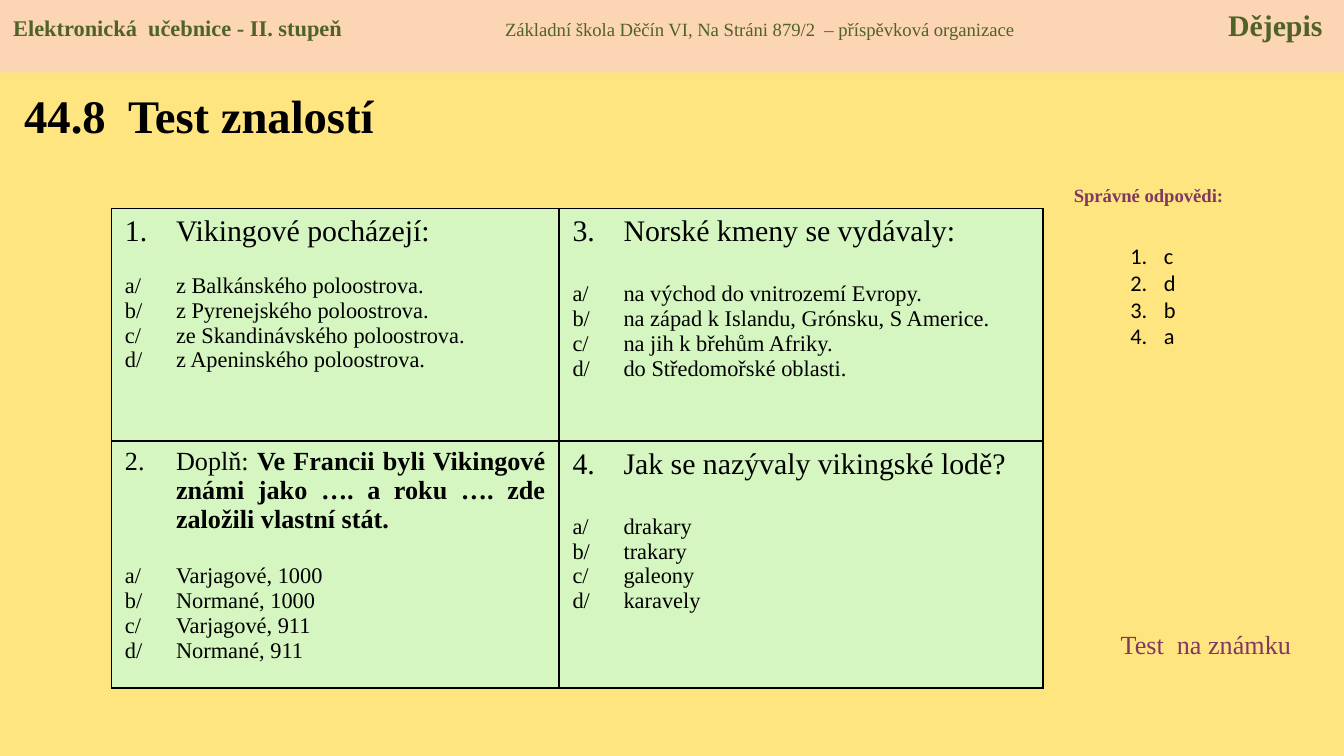
from pptx import Presentation
from pptx.dml.color import RGBColor
from pptx.enum.shapes import MSO_SHAPE
from pptx.enum.text import MSO_ANCHOR, MSO_AUTO_SIZE, PP_ALIGN
from pptx.oxml.ns import qn
from pptx.util import Inches, Pt
from lxml.etree import SubElement

COLORS = {
    "background": "FFE57F",
    "header": "FCD5B5",
    "green": "4F6228",
    "purple": "813763",
    "cell": "D5F6C0",
    "black": "000000",
}
SERIF = "Times New Roman"
INDENT = 0.38

QUESTIONS = [
    [
        dict(number=1, size=16, gap=13.5, prompt=[("Vikingové pocházejí:", False)],
             answers=["z Balkánského poloostrova.", "z Pyrenejského poloostrova.",
                      "ze Skandinávského poloostrova.", "z Apeninského poloostrova."]),
        dict(number=3, size=16, gap=18, prompt=[("Norské kmeny se vydávaly:", False)],
             answers=["na východ do vnitrozemí Evropy.",
                      "na západ k Islandu, Grónsku, S Americe.",
                      "na jih k břehům Afriky.", "do Středomořské oblasti."]),
    ],
    [
        dict(number=2, size=14, gap=16, align=PP_ALIGN.JUSTIFY,
             prompt=[("Doplň: ", False),
                     ("Ve Francii byli Vikingové známi jako …. a roku …. "
                      "zde založili vlastní stát.", True)],
             answers=["Varjagové, 1000", "Normané, 1000", "Varjagové, 911", "Normané, 911"]),
        dict(number=4, size=16, gap=18, prompt=[("Jak se nazývaly vikingské lodě?", False)],
             answers=["drakary", "trakary", "galeony", "karavely"]),
    ],
]


def rgb(name):
    return RGBColor.from_string(COLORS[name])


def add_run(p, text, size=12, bold=False, color="black", font=SERIF):
    r = p.add_run()
    r.text = text
    r.font.size = Pt(size)
    r.font.bold = bold
    r.font.name = font
    r.font.color.rgb = rgb(color)


def next_paragraph(tf, first):
    p = tf.paragraphs[0] if first else tf.add_paragraph()
    p.space_before = p.space_after = Pt(0)
    return p


def hang(p, indent, number=None):
    pPr = p._p.get_or_add_pPr()
    pPr.set("marL", str(Inches(indent)))
    pPr.set("indent", str(-Inches(indent)))
    if number:
        SubElement(pPr, qn("a:buFont"), typeface="+mj-lt")
        SubElement(pPr, qn("a:buAutoNum"), type="arabicPeriod", startAt=str(number))


def add_tabs(p, stops):
    tabs = SubElement(p._p.get_or_add_pPr(), qn("a:tabLst"))
    for stop in stops:
        SubElement(tabs, qn("a:tab"), pos=str(Inches(stop)), algn="l")


def add_borders(cell):
    tcPr = cell._tc.get_or_add_tcPr()
    for side in ("lnL", "lnR", "lnT", "lnB"):
        ln = SubElement(tcPr, qn(f"a:{side}"), w=str(Pt(1)))
        fill = SubElement(ln, qn("a:solidFill"))
        SubElement(fill, qn("a:srgbClr"), val=COLORS["black"])


class TestSlide:
    def __init__(self, prs):
        self.slide = prs.slides.add_slide(prs.slide_layouts[1])
        fill = self.slide.background.fill
        fill.solid()
        fill.fore_color.rgb = rgb("background")

    def place(self, sp, box):
        sp.left, sp.top, sp.width, sp.height = map(Inches, box)
        tf = sp.text_frame
        tf.word_wrap = True
        tf.auto_size = MSO_AUTO_SIZE.NONE
        return tf

    def title(self, text, box):
        tf = self.place(self.slide.shapes.title, box)
        tf.margin_left = Inches(0.18)
        tf.vertical_anchor = MSO_ANCHOR.MIDDLE
        p = next_paragraph(tf, True)
        p.alignment = PP_ALIGN.LEFT
        add_run(p, text, size=25, bold=True)

    def numbered_list(self, items, box):
        tf = self.place(self.slide.placeholders[1], box)
        tf.margin_top = Inches(0.25)
        for i, item in enumerate(items):
            p = next_paragraph(tf, i == 0)
            hang(p, 0.25, number=1)
            add_run(p, item, font="Calibri")

    def label(self, text, box, align=PP_ALIGN.LEFT, **style):
        tf = self.place(self.slide.shapes.add_textbox(*map(Inches, box)), box)
        p = next_paragraph(tf, True)
        p.alignment = align
        add_run(p, text, **style)

    def header(self, parts, stops, box):
        sp = self.slide.shapes.add_shape(MSO_SHAPE.RECTANGLE, *map(Inches, box))
        sp.shadow.inherit = False
        sp.fill.solid()
        sp.fill.fore_color.rgb = rgb("header")
        sp.line.fill.background()
        tf = self.place(sp, box)
        tf.vertical_anchor = MSO_ANCHOR.TOP
        p = next_paragraph(tf, True)
        p.alignment = PP_ALIGN.LEFT
        add_tabs(p, stops)
        for i, (text, size, bold) in enumerate(parts):
            add_run(p, "\t" * (i > 0) + text, size=size, bold=bold, color="green")

    def question(self, cell, number, size, gap, prompt, answers, align=PP_ALIGN.LEFT):
        add_borders(cell)
        cell.fill.solid()
        cell.fill.fore_color.rgb = rgb("cell")
        tf = cell.text_frame
        p = next_paragraph(tf, True)
        p.alignment = align
        hang(p, INDENT, number)
        for text, bold in prompt:
            add_run(p, text, size=size, bold=bold)
        for i, (letter, answer) in enumerate(zip("abcd", answers)):
            p = next_paragraph(tf, False)
            if i == 0:
                p.space_before = Pt(gap)
            hang(p, INDENT)
            add_run(p, f"{letter}/\t{answer}")

    def question_table(self, questions, left, top, widths, heights):
        box = (left, top, sum(widths), sum(heights))
        table = self.slide.shapes.add_table(
            len(heights), len(widths), *map(Inches, box)).table
        table.first_row = table.horz_banding = False
        for column, width in zip(table.columns, widths):
            column.width = Inches(width)
        for i, height in enumerate(heights):
            table.rows[i].height = Inches(height)
            for j, question in enumerate(questions[i]):
                self.question(table.cell(i, j), **question)


def main():
    prs = Presentation()
    prs.slide_width = Inches(10)
    prs.slide_height = prs.slide_width * 9 // 16
    s = TestSlide(prs)
    s.title("44.8  Test znalostí", (0, 0.53, 3.9, 0.65))
    s.label("Správné odpovědi:", (7.76, 1.32, 1.57, 0.27), align=PP_ALIGN.CENTER,
            size=10, bold=True, color="purple")
    s.question_table(QUESTIONS, 0.83, 1.55, widths=(3.33, 3.6), heights=(1.73, 1.84))
    s.numbered_list("cdba", (8.31, 1.55, 0.55, 1.31))
    s.label("Test  na známku", (8.24, 4.63, 1.57, 0.34), size=14, color="purple")
    s.header([("Elektronická  učebnice - II. stupeň", 12, True),
              ("Základní škola Děčín VI, Na Stráni 879/2  – příspěvková organizace", 10, False),
              ("Dějepis", 16, True)],
             stops=(3.66, 9.04), box=(0, 0, 10, 0.54))
    prs.save("out.pptx")


if __name__ == "__main__":
    main()
